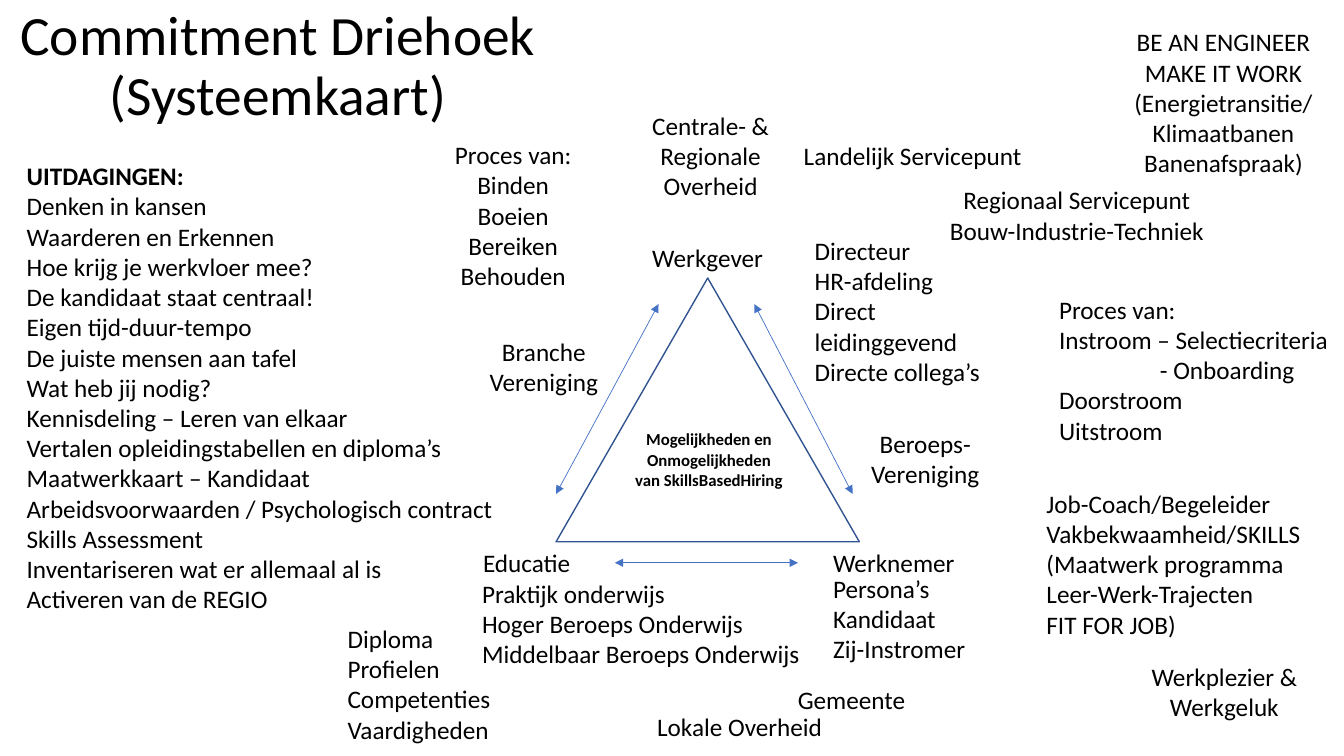
from pptx import Presentation
from pptx.util import Inches, Pt
from pptx.dml.color import RGBColor
from pptx.enum.shapes import MSO_SHAPE, MSO_CONNECTOR
from pptx.enum.text import PP_ALIGN, MSO_ANCHOR, MSO_AUTO_SIZE
from pptx.oxml.ns import qn
from lxml.etree import SubElement

THEME = {
    "font": "Calibri",
    "ink": RGBColor(0x00, 0x00, 0x00),
    "edge": RGBColor(0x32, 0x54, 0x91),
    "arrow": RGBColor(0x44, 0x72, 0xC4),
    "title": Pt(39.6),
    "label": Pt(18),
    "core": Pt(12),
}
LEFT, MID = PP_ALIGN.LEFT, PP_ALIGN.CENTER

deck = Presentation()
deck.slide_width, deck.slide_height = Inches(13.33), Inches(7.5)
slide = deck.slides.add_slide(deck.slide_layouts[6])

# Grid of 160 columns by 90 rows
COL, ROW = deck.slide_width / 160, deck.slide_height / 90
LINE, PAD = 3.63, 1.2  # rows per text line, rows of inset per box


def grid(x, y):
    return round(x * COL), round(y * ROW)


def add_text(x, y, w, h, lines, size, align):
    box = slide.shapes.add_textbox(*grid(x, y), *grid(w, h))
    frame = box.text_frame
    frame.word_wrap = True
    frame.text = "\n".join(lines)
    for para in frame.paragraphs:
        para.alignment = align
        para.font.name = THEME["font"]
        para.font.size = size
        para.font.color.rgb = THEME["ink"]
    return frame


title = add_text(-1.1, 1.1, 68.4, 13.8,
                 ["Commitment Driehoek", "(Systeemkaart)"], THEME["title"], MID)
title.vertical_anchor = MSO_ANCHOR.MIDDLE
for para in title.paragraphs:
    para.line_spacing = 0.9

# Triangle with its core text
tri = slide.shapes.add_shape(MSO_SHAPE.ISOSCELES_TRIANGLE,
                             *grid(66.2, 33.1), *grid(36.1, 31.4))
tri.shadow.inherit = False
tri.fill.background()
tri.line.color.rgb = THEME["edge"]
tri.line.width = Pt(1)

core = add_text(74.3, 50.5, 20.2, 8.5,
                ["Mogelijkheden en Onmogelijkheden van SkillsBasedHiring"],
                THEME["core"], MID)
core.paragraphs[0].font.bold = True

# Labels: column, row, width, alignment, lines
labels = [
    (76.4, 28.2, 15.7, MID, "Werkgever"),
    (97.9, 64.6, 17, MID, "Werknemer"),
    (56.2, 64.6, 13, MID, "Educatie"),
    (56.2, 68.2, 41.8, LEFT,
     "Praktijk onderwijs|Hoger Beroeps Onderwijs|Middelbaar Beroeps Onderwijs"),
    (98, 67.6, 18.2, LEFT, "Persona’s|Kandidaat|Zij-Instromer"),
    (95.8, 27.4, 26.9, LEFT,
     "Directeur|HR-afdeling|Direct leidinggevend|Directe collega’s"),
    (52.9, 16, 16.4, MID, "Proces van:|Binden|Boeien|Bereiken|Behouden"),
    (123.4, 57.5, 32.9, LEFT,
     "Job-Coach/Begeleider|Vakbekwaamheid/SKILLS|(Maatwerk programma|"
     "Leer-Werk-Trajecten|FIT FOR JOB)"),
    (133.7, 2.6, 23.9, MID,
     "BE AN ENGINEER|MAKE IT WORK|(Energietransitie/|Klimaatbanen|Banenafspraak)"),
    (57, 39.4, 15.5, MID, "Branche|Vereniging"),
    (102.4, 50.4, 15.5, MID, "Beroeps-|Vereniging"),
    (76.9, 84.1, 22.3, MID, "Lokale Overheid"),
    (76.4, 12.5, 16.4, MID, "Centrale- &|Regionale|Overheid"),
    (124.9, 34.4, 34.8, LEFT,
     "Proces van:|Instroom – Selectiecriteria|- Onboarding|Doorstroom|Uitstroom"),
    (94.3, 16.1, 28.7, MID, "Landelijk Servicepunt"),
    (111.7, 21.4, 33, MID, "Regionaal Servicepunt|Bouw-Industrie-Techniek"),
    (40.2, 73.6, 19.6, LEFT, "Diploma|Profielen|Competenties|Vaardigheden"),
    (135.8, 78.1, 19.9, MID, "Werkplezier &|Werkgeluk"),
    (93.8, 80.9, 15.4, LEFT, "Gemeente"),
    (2, 18.5, 58.4, LEFT,
     "UITDAGINGEN:|Denken in kansen|Waarderen en Erkennen|"
     "Hoe krijg je werkvloer mee?|De kandidaat staat centraal!|"
     "Eigen tijd-duur-tempo|De juiste mensen aan tafel|Wat heb jij nodig?|"
     "Kennisdeling – Leren van elkaar|Vertalen opleidingstabellen en diploma’s|"
     "Maatwerkkaart – Kandidaat|Arbeidsvoorwaarden / Psychologisch contract|"
     "Skills Assessment|Inventariseren wat er allemaal al is|"
     "Activeren van de REGIO"),
]
for x, y, w, align, text in labels:
    lines = text.split("|")
    frame = add_text(x, y, w, len(lines) * LINE + PAD, lines, THEME["label"], align)
    frame.word_wrap = False
    frame.auto_size = MSO_AUTO_SIZE.SHAPE_TO_FIT_TEXT
    for para in frame.paragraphs:
        if para.text == "UITDAGINGEN:":
            para.font.bold = True
        elif para.text == "- Onboarding":
            para._p.get_or_add_pPr().set("marL", str(Inches(1)))

# Two-way arrows along the three sides
sides = [(78.4, 36.2, 66.2, 58.8), (73.2, 67, 95, 67), (89.8, 36.2, 101.5, 58.8)]
for x1, y1, x2, y2 in sides:
    arrow = slide.shapes.add_connector(MSO_CONNECTOR.STRAIGHT,
                                       *grid(x1, y1), *grid(x2, y2))
    arrow.line.color.rgb = THEME["arrow"]
    arrow.line.width = Pt(0.5)
    for end in ("a:headEnd", "a:tailEnd"):
        SubElement(arrow.line._get_or_add_ln(), qn(end), type="triangle")
    SubElement(arrow._element.spPr, qn("a:effectLst"))

deck.save("out.pptx")
